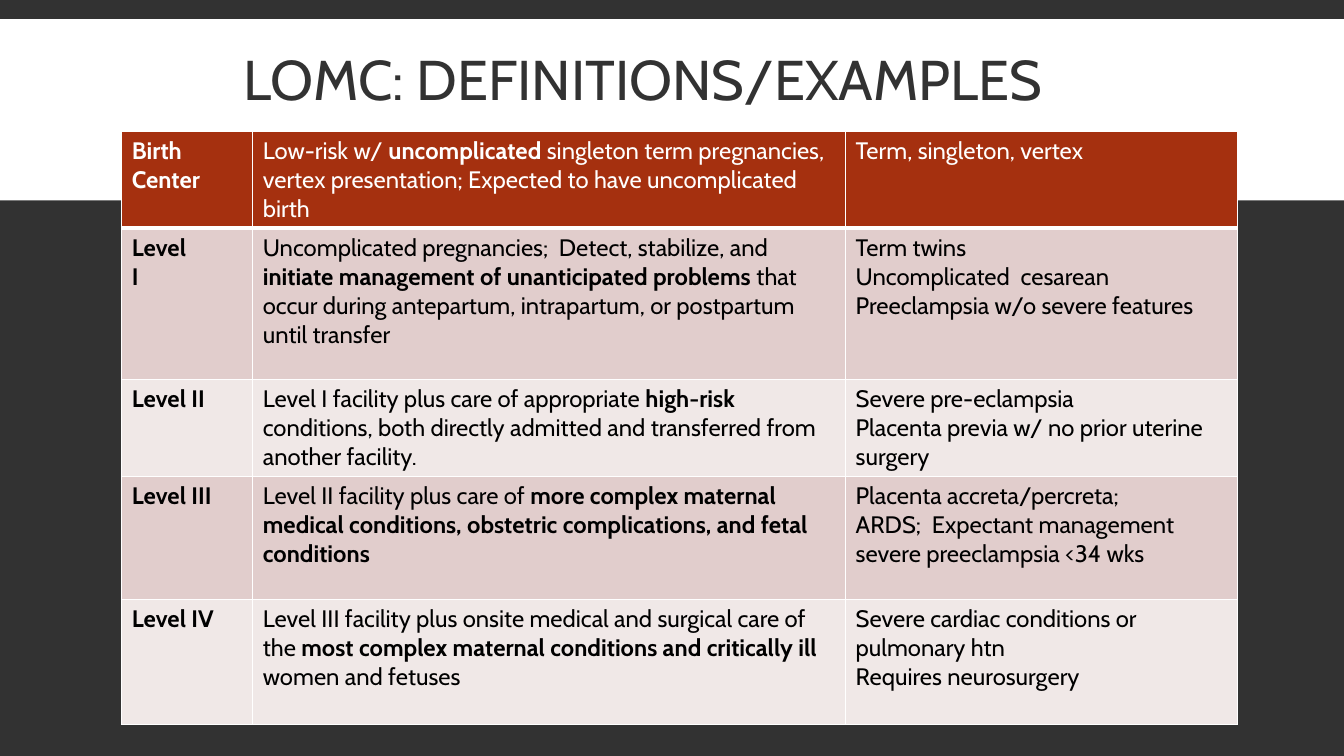
import pptx
import pptx.util
import pptx.dml.color
import pptx.enum.shapes
import pptx.enum.text
import pptx.oxml
import pptx.oxml.ns

Cm, Pt = pptx.util.Cm, pptx.util.Pt
FONT = "Cabin"
DARK, WHITE, BLACK, RUST = "323232", "FFFFFF", "000000", "A5300F"
BANDS = ["F0E8E7", "E1CDCC"]
COLS = [3.3, 14.94, 9.88]
ROWS = [2.44, 3.81, 2.44, 3.1, 3.15]

# Each cell is a list of paragraphs; asterisks enclose bold words.
LEVELS = [
    [["*Birth Center*"],
     ["Low-risk w/ *uncomplicated* singleton term pregnancies, vertex "
      "presentation; Expected to have uncomplicated birth"],
     ["Term, singleton, vertex"]],
    [["*Level*", "*I*"],
     ["Uncomplicated pregnancies;  Detect, stabilize, and *initiate management "
      "of unanticipated problems* that occur during antepartum, intrapartum, "
      "or postpartum until transfer"],
     ["Term twins", "Uncomplicated  cesarean", "Preeclampsia w/o severe features"]],
    [["*Level II*"],
     ["Level I facility plus care of appropriate *high-risk* conditions, both "
      "directly admitted and transferred from another facility."],
     ["Severe pre-eclampsia", "Placenta previa w/ no prior uterine surgery"]],
    [["*Level III*"],
     ["Level II facility plus care of *more complex maternal medical conditions, "
      "obstetric complications, and fetal conditions*"],
     ["Placenta accreta/percreta;",
      "ARDS;  Expectant management severe preeclampsia <34 wks"]],
    [["*Level IV*"],
     ["Level III facility plus onsite medical and surgical care of the *most "
      "complex maternal conditions and critically ill *women and fetuses"],
     ["Severe cardiac conditions or pulmonary htn", "Requires neurosurgery"]],
]


def paint(fill, hue):
    fill.solid()
    fill.fore_color.rgb = pptx.dml.color.RGBColor.from_string(hue)


def add_run(para, text, size, hue, bold=False):
    run = para.add_run()
    run.text = text
    run.font.name = FONT
    run.font.size = Pt(size)
    run.font.bold = bold
    paint(run.font.fill, hue)


def add_band(slide, left, top, width, height):
    """Lay the white band behind everything else."""
    band = slide.shapes.add_shape(
        pptx.enum.shapes.MSO_SHAPE.RECTANGLE,
        Cm(left), Cm(top), Cm(width), Cm(height))
    band.shadow.inherit = False
    paint(band.fill, WHITE)
    band.line.fill.background()
    slide.shapes._spTree.insert(2, band._element)


def set_title(slide, left, top, width, height):
    title = slide.shapes.title
    title.left, title.top = Cm(left), Cm(top)
    title.width, title.height = Cm(width), Cm(height)
    frame = title.text_frame
    frame.word_wrap = True
    frame.vertical_anchor = pptx.enum.text.MSO_ANCHOR.MIDDLE
    para = frame.paragraphs[0]
    para.alignment = pptx.enum.text.PP_ALIGN.LEFT
    para.line_spacing = 0.85
    add_run(para, "LOMC: DEFINITIONS/EXAMPLES", 40, DARK)


def set_edge(cell, side, width):
    props = cell._tc.get_or_add_tcPr()
    props.append(pptx.oxml.parse_xml(
        f'<a:ln{side} {pptx.oxml.ns.nsdecls("a")} w="{Pt(width)}">'
        f'<a:solidFill><a:srgbClr val="{WHITE}"/></a:solidFill></a:ln{side}>'))


def fill_cell(cell, paras, row):
    head = row == 0
    for side in "LRTB":
        thick = (head and side == "B") or (row == 1 and side == "T")
        set_edge(cell, side, 3 if thick else 1)
    paint(cell.fill, RUST if head else BANDS[row % 2])
    frame = cell.text_frame
    for i, text in enumerate(paras):
        para = frame.add_paragraph() if i else frame.paragraphs[0]
        for j, part in enumerate(text.split("*")):
            if part:
                add_run(para, part, 17, WHITE if head else BLACK, j % 2 == 1)


def add_grid(slide, left, top):
    table = slide.shapes.add_table(
        len(ROWS), len(COLS), Cm(left), Cm(top),
        Cm(sum(COLS)), Cm(sum(ROWS))).table
    for col, width in zip(table.columns, COLS):
        col.width = Cm(width)
    for row, height in zip(table.rows, ROWS):
        row.height = Cm(height)
    for r, level in enumerate(LEVELS):
        for c, paras in enumerate(level):
            fill_cell(table.cell(r, c), paras, r)


def main():
    deck = pptx.Presentation()
    deck.slide_width, deck.slide_height = Cm(33.87), Cm(19.05)
    slide = deck.slides.add_slide(deck.slide_layouts.get_by_name("Title Only"))
    paint(slide.background.fill, DARK)
    add_band(slide, 0, 0.48, 33.87, 4.57)
    set_title(slide, 5.89, 0, 27.18, 4.19)
    add_grid(slide, 3.07, 3.3)
    deck.save("out.pptx")


if __name__ == "__main__":
    main()
